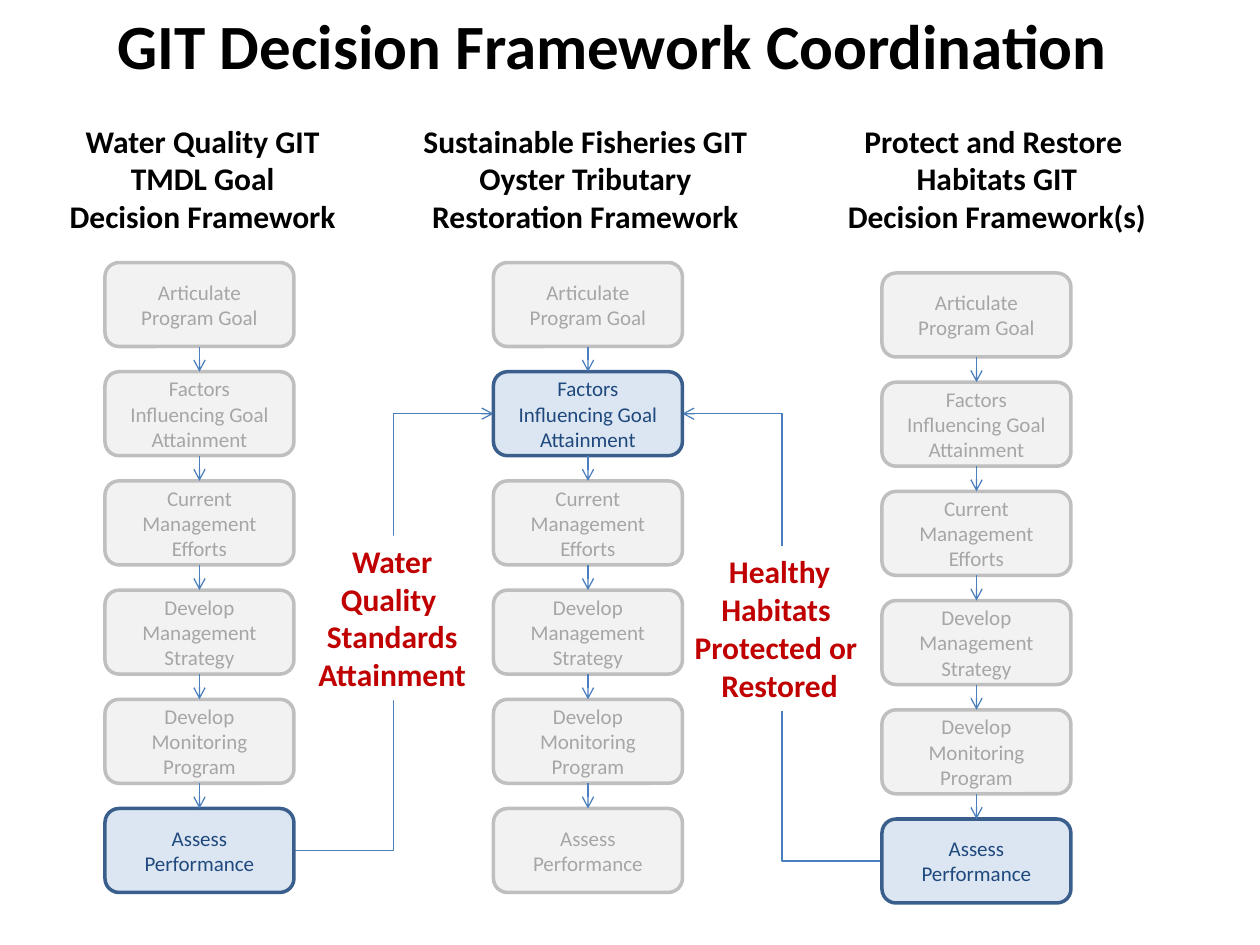
from lxml import etree
from pptx import Presentation, util as u
from pptx.dml.color import RGBColor
from pptx.enum import shapes as sh, text as tx
from pptx.oxml.ns import qn

PX = 7620
TOP, LEFT, BOTTOM, RIGHT = range(4)
WIDE, HIGH, PITCH = 180, 80, 104
HUES = {
    "ink": "000000", "alert": "C00000", "paper": "FFFFFF", "wire": "4B7EBC",
    "dim": "F2F2F2", "dim_edge": "BFBFBF", "dim_ink": "A6A6A6",
    "lit": "DCE6F2", "lit_edge": "3A5F8C", "lit_ink": "1F497D",
}
STEPS = [
    "Articulate Program Goal",
    "Factors Influencing Goal Attainment",
    "Current Management Efforts",
    "Develop Management Strategy",
    "Develop\nMonitoring Program",
    "Assess Performance",
]
COLUMNS = [
    ((100, 250), 5, (53, 110, 280, 121),
     "Water Quality GIT\nTMDL Goal\nDecision Framework"),
    ((470, 250), 1, (390, 110, 335, 121),
     "Sustainable Fisheries GIT\nOyster Tributary\nRestoration Framework"),
    ((840, 260), 5, (791, 110, 317, 121),
     "Protect and Restore \nHabitats GIT\nDecision Framework(s)"),
]
LABELS = [
    ((290, 510, 167, 157), "Water\nQuality \nStandards\nAttainment"),
    ((649, 520, 187, 157), "Healthy\nHabitats \nProtected or \nRestored"),
]


def hue(name):
    """Return the named colour."""
    return RGBColor.from_string(HUES[name])


def px(box):
    """Turn px lengths into EMU."""
    return [u.Emu(n * PX) for n in box]


def write(shape, words, size, ink, bold=False, wrap=False,
          align=tx.PP_ALIGN.CENTER, anchor=tx.MSO_ANCHOR.TOP):
    """Set a shape's text and its format."""
    frame = shape.text_frame
    frame.text = words
    frame.word_wrap = wrap
    frame.vertical_anchor = anchor
    for para in frame.paragraphs:
        para.alignment = align
        for run in para.runs:
            font = run.font
            font.name, font.size, font.bold = "Calibri", u.Pt(size), bold
            font.color.rgb = hue(ink)


def wire(slide, kind):
    """Add an arrow that is yet to be joined."""
    line = slide.shapes.add_connector(kind, 0, 0, 0, 0)
    line.line.color.rgb = hue("wire")
    line.line.width = u.Pt(0.75)
    edge = line.line._get_or_add_ln()
    etree.SubElement(edge, qn("a:tailEnd"), type="arrow")
    etree.SubElement(line._element.spPr, qn("a:effectLst"))
    return line


def join(line, start, out, end, into):
    """Run an arrow from one box side to another."""
    line.begin_connect(start, out)
    line.end_connect(end, into)


def head(slide, box, words):
    """Place the slide title."""
    title = slide.shapes.title
    title.left, title.top, title.width, title.height = px(box)
    write(title, words, 36, "ink", bold=True, align=tx.PP_ALIGN.LEFT)
    title.text_frame.auto_size = tx.MSO_AUTO_SIZE.NONE


def label(slide, box, words):
    """Place a red label that covers the wire behind it."""
    card = slide.shapes.add_shape(sh.MSO_SHAPE.RECTANGLE, *px(box))
    card.shadow.inherit = False
    card.fill.solid()
    card.fill.fore_color.rgb = hue("paper")
    card.line.fill.background()
    write(card, words, 18, "alert", bold=True)


def step(slide, box, words, tone):
    """Place one rounded step box."""
    card = slide.shapes.add_shape(sh.MSO_SHAPE.ROUNDED_RECTANGLE, *px(box))
    card.shadow.inherit = False
    card.fill.solid()
    card.fill.fore_color.rgb = hue(tone)
    card.line.color.rgb = hue(tone + "_edge")
    card.line.width = u.Pt(2)
    write(card, words, 12, tone + "_ink", wrap=True,
          anchor=tx.MSO_ANCHOR.MIDDLE)
    return card


def column(slide, spot, lit, box, words):
    """Place a heading and its chain of steps."""
    write(slide.shapes.add_textbox(*px(box)), words, 18, "ink", bold=True)
    left, top = spot
    cards = [
        step(slide, (left, top + i * PITCH, WIDE, HIGH), name,
             "lit" if i == lit else "dim")
        for i, name in enumerate(STEPS)
    ]
    for upper, lower in zip(cards, cards[1:]):
        join(wire(slide, sh.MSO_CONNECTOR.STRAIGHT), upper, BOTTOM, lower, TOP)
    return cards


def main():
    """Build and save the slide."""
    deck = Presentation()
    deck.slide_width, deck.slide_height = px((1200, 900))
    slide = deck.slides.add_slide(deck.slide_layouts[5])
    head(slide, (100, 0, 977, 85), "GIT Decision Framework Coordination")
    links = [wire(slide, sh.MSO_CONNECTOR.ELBOW) for _ in LABELS]
    for box, words in LABELS:
        label(slide, box, words)
    water, fish, land = [column(slide, *spec) for spec in COLUMNS]
    join(links[0], water[5], RIGHT, fish[1], LEFT)
    join(links[1], land[5], LEFT, fish[1], RIGHT)
    deck.save("out.pptx")


if __name__ == "__main__":
    main()
